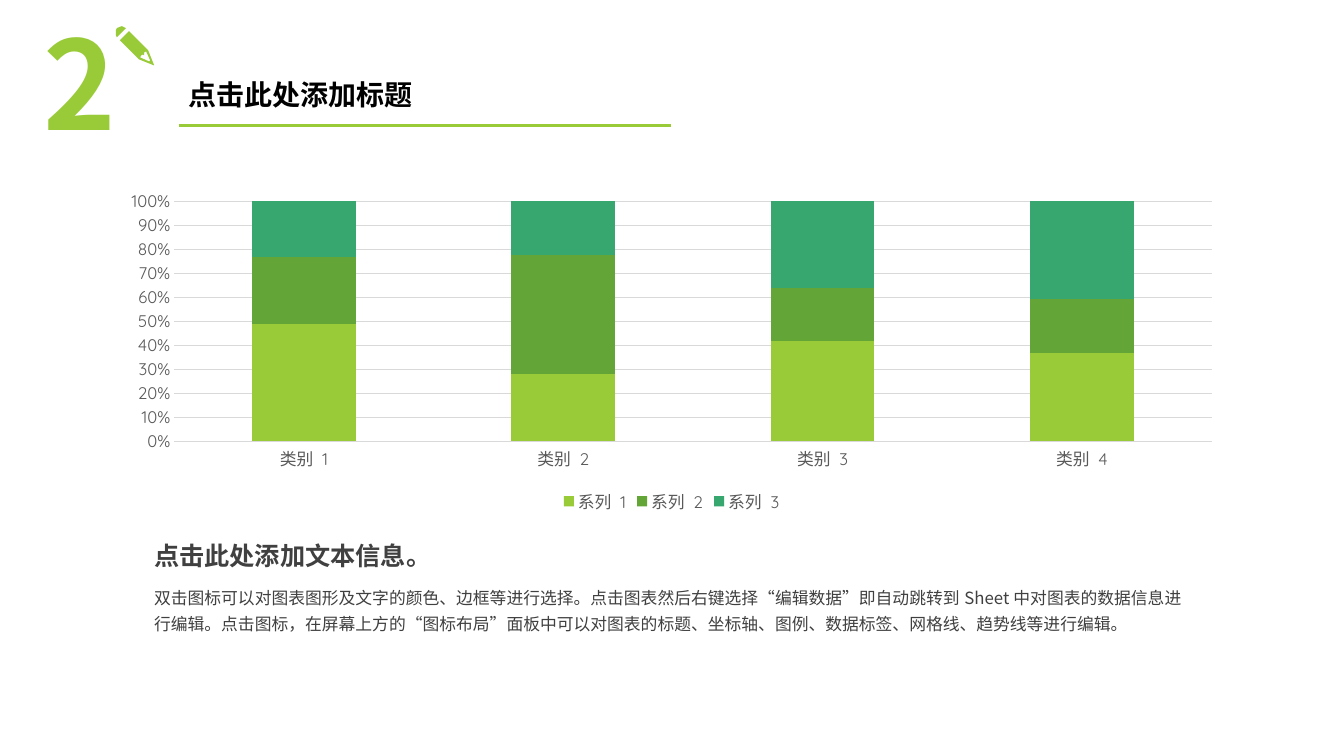
from lxml import etree
from pptx import Presentation
from pptx.chart.data import CategoryChartData
from pptx.dml.color import RGBColor
from pptx.enum.chart import XL_CHART_TYPE as ChartType
from pptx.enum.chart import XL_LEGEND_POSITION as LegendPos
from pptx.enum.chart import XL_TICK_MARK as TickMark
from pptx.enum.text import MSO_ANCHOR as Anchor
from pptx.enum.text import MSO_AUTO_SIZE as AutoSize
from pptx.enum.text import PP_ALIGN as Align
from pptx.oxml.ns import qn
from pptx.util import Pt

LIME = RGBColor(0x99, 0xCB, 0x38)
GREEN = RGBColor(0x63, 0xA5, 0x37)
TEAL = RGBColor(0x37, 0xA7, 0x6F)
BLACK = RGBColor(0, 0, 0)
DARK_GREY = RGBColor(0x40, 0x40, 0x40)
AXIS_GREY = RGBColor(0x59, 0x59, 0x59)
GRID_GREY = RGBColor(0xD9, 0xD9, 0xD9)
TEXT_FONT = "Noto Sans CJK SC"
CHART_FONT = "Quicksand"

# Content
TITLE = "点击此处添加标题"
NUMBER = "2"
HEADING = "点击此处添加文本信息。"
DESCRIPTION = (
    "双击图标可以对图表图形及文字的颜色、边框等进行选择。"
    "点击图表然后右键选择“编辑数据”即自动跳转到Sheet中对图表的数据信息进行编辑。"
    "点击图标，在屏幕上方的“图标布局”面板中可以对图表的标题、坐标轴、图例、"
    "数据标签、网格线、趋势线等进行编辑。"
)
CATEGORIES = ["类别 1", "类别 2", "类别 3", "类别 4"]
SERIES = [
    ("系列 1", (49, 28, 42, 37), LIME),
    ("系列 2", (28, 49, 22, 23), GREEN),
    ("系列 3", (23, 22, 36, 41), TEAL),
]

# Boxes in points: left, top, width, height
TITLE_BOX = (127.6, 48.2, 351.4, 41.6)
NUMBER_BOX = (23.8, 18.7, 69.8, 91.4)
CHART_BOX = (78, 131.6, 803.5, 238.3)
HEADING_BOX = (103, 375.8, 214.6, 35.3)
DESCRIPTION_BOX = (103, 411.8, 751, 45.4)

# Pencil outlines, on a grid of 0.72 pt
PENCIL_GRID = Pt(0.72)
PENCIL_END = [[
    (116, 28), (115, 30), (115, 35), (116, 37), (125, 28),
    (123, 27), (121, 26), (118, 27),
]]
PENCIL_BODY = [
    [(138, 59), (153, 65), (147, 50), (128, 31), (119, 40)],
    [(140, 55), (142, 54), (143, 55), (143, 52), (145, 51),
     (149, 60), (148, 61), (139, 57)],
]


def write(shape, text, size, color, bold, **layout):
    frame = shape.text_frame
    for name, value in layout.items():
        setattr(frame, name, value)
    paragraph = frame.paragraphs[0]
    paragraph.alignment = Align.LEFT
    run = paragraph.add_run()
    run.text = text
    style_font(run.font, size, color, TEXT_FONT, bold)
    east_asian = etree.SubElement(run.font._element, qn("a:ea"))
    east_asian.set("typeface", TEXT_FONT)
    return paragraph


def style_font(font, size, color, face, bold=False):
    for name, value in {"size": Pt(size), "name": face, "bold": bold}.items():
        setattr(font, name, value)
    font.color.rgb = color


prs = Presentation()
prs.slide_width, prs.slide_height = Pt(960), Pt(540)
slide = prs.slides.add_slide(prs.slide_layouts[5])
shapes = slide.shapes

# Title and its underline
title = shapes.title
title.left, title.top, title.width, title.height = map(Pt, TITLE_BOX)
number = shapes.add_textbox(*map(Pt, NUMBER_BOX))
for shape, text, size, color in (
    (title, TITLE, 20, BLACK),
    (number, NUMBER, 88, LIME),
):
    paragraph = write(shape, text, size, color, True, word_wrap=True,
                      auto_size=AutoSize.NONE, vertical_anchor=Anchor.MIDDLE)
    paragraph.line_spacing = 0.9
    paragraph.space_before = Pt(10)

left, top, width, height = TITLE_BOX
underline_y = Pt(top + height)
underline = shapes.add_connector(1, Pt(left), underline_y,
                                 Pt(left + width), underline_y)
underline.line.color.rgb = LIME
underline.line.width = Pt(2.25)
etree.SubElement(underline._element.spPr, qn("a:effectLst"))

# Pencil
for outlines in (PENCIL_END, PENCIL_BODY):
    builder = shapes.build_freeform(*outlines[0][0], scale=PENCIL_GRID)
    for index, outline in enumerate(outlines):
        if index:
            builder.move_to(*outline[0])
        builder.add_line_segments(outline[1:], close=True)
    pencil_part = builder.convert_to_shape()
    pencil_part.shadow.inherit = False
    pencil_part.fill.solid()
    pencil_part.fill.fore_color.rgb = LIME
    pencil_part.line.fill.background()

# Chart of shares
data = CategoryChartData()
data.categories = CATEGORIES
for name, values, _ in SERIES:
    data.add_series(name, values)
chart = shapes.add_chart(ChartType.COLUMN_STACKED_100,
                         *map(Pt, CHART_BOX), data).chart
style_font(chart.font, 12, AXIS_GREY, CHART_FONT)
chart.has_title = False
chart.has_legend = True
chart.legend.position = LegendPos.BOTTOM
chart.legend.include_in_layout = False

plot = chart.plots[0]
for name, value in {"gap_width": 150, "overlap": 100,
                    "vary_by_categories": False}.items():
    setattr(plot, name, value)
for series, (_, _, color) in zip(plot.series, SERIES):
    series.format.fill.solid()
    series.format.fill.fore_color.rgb = color

shares = chart.value_axis
for axis in (chart.category_axis, shares):
    axis.major_tick_mark = axis.minor_tick_mark = TickMark.NONE
    axis.format.line.fill.background()
    style_font(axis.tick_labels.font, 12, AXIS_GREY, CHART_FONT)
shares.tick_labels.number_format = "0%"
shares.tick_labels.number_format_is_linked = False
shares.has_major_gridlines = True
shares.major_gridlines.format.line.color.rgb = GRID_GREY
shares.major_gridlines.format.line.width = Pt(0.75)

# Heading and description
for box, text, size, bold, wrap in (
    (HEADING_BOX, HEADING, 18, True, False),
    (DESCRIPTION_BOX, DESCRIPTION, 12, False, True),
):
    text_box = shapes.add_textbox(*map(Pt, box))
    paragraph = write(text_box, text, size, DARK_GREY, bold, word_wrap=wrap,
                      auto_size=AutoSize.SHAPE_TO_FIT_TEXT)
    paragraph.line_spacing = 1.3

prs.save("out.pptx")
